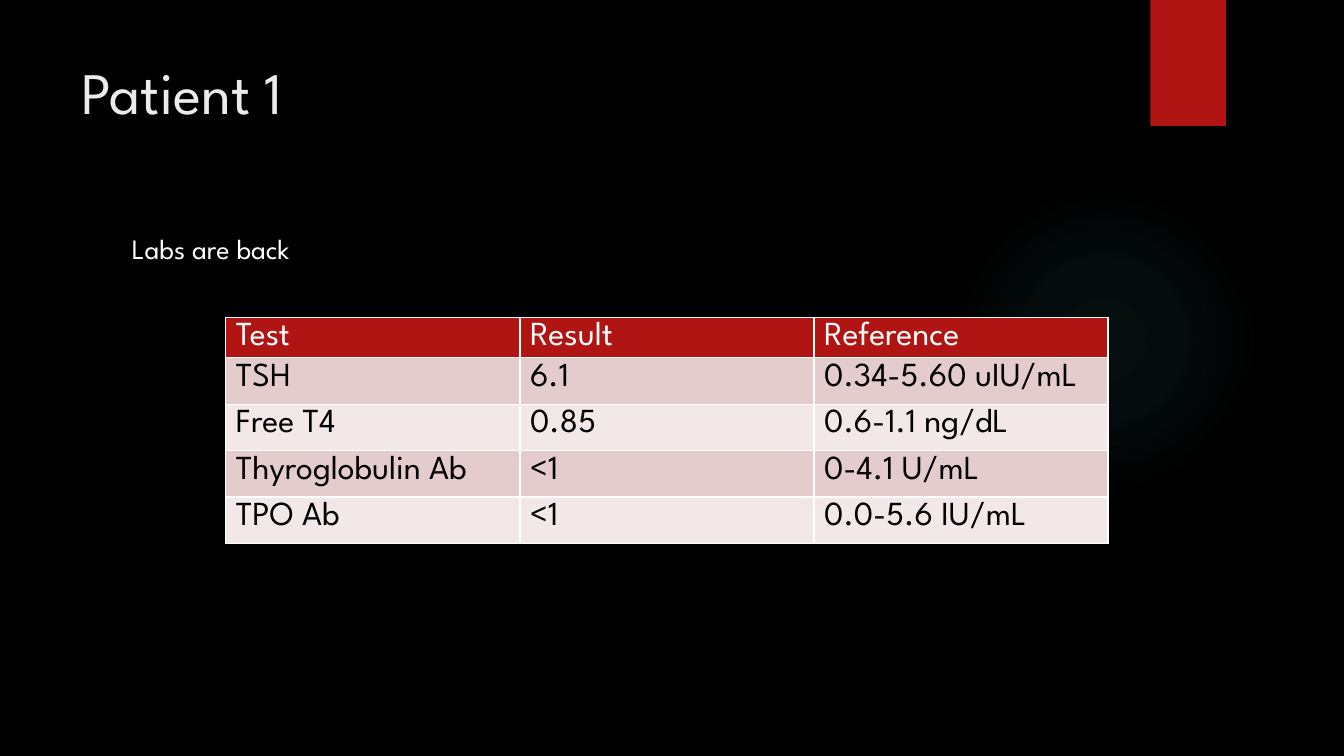
from lxml import etree
from pptx import Presentation
from pptx.dml.color import RGBColor
from pptx.enum.shapes import MSO_SHAPE
from pptx.enum.text import MSO_ANCHOR
from pptx.oxml import parse_xml
from pptx.oxml.ns import nsdecls, qn
from pptx.util import Inches, Pt

OVAL, RECT = MSO_SHAPE.OVAL, MSO_SHAPE.RECTANGLE
TOP, MIDDLE = MSO_ANCHOR.TOP, MSO_ANCHOR.MIDDLE
FONT = "League Spartan"
RED, WHITE, BLACK = "B01513", "FFFFFF", "000000"
BANDS = ["E4CCCC", "F2E8E7"]
LABS = [
    ["Test", "Result", "Reference"],
    ["TSH", "6.1", "0.34-5.60 uIU/mL"],
    ["Free T4", "0.85", "0.6-1.1 ng/dL"],
    ["Thyroglobulin Ab", "<1", "0-4.1 U/mL"],
    ["TPO Ab", "<1", "0.0-5.6 IU/mL"],
]


def rgb(code):
    return RGBColor.from_string(code)


def inches(box):
    return [Inches(n) for n in box]


def style(frame, size, color):
    for par in frame.paragraphs:
        for run in par.runs:
            run.font.name = FONT
            run.font.size = Pt(size)
            run.font.color.rgb = rgb(color)


def add_plain(slide, kind, box):
    shape = slide.shapes.add_shape(kind, *inches(box))
    shape.shadow.inherit = False
    shape.line.fill.background()
    return shape


def add_glow(slide, box):
    glow = add_plain(slide, OVAL, box)
    stops = "".join(
        f'<a:gs pos="{pos}000"><a:srgbClr val="50B9C1">'
        f'<a:alpha val="{alpha}000"/></a:srgbClr></a:gs>'
        for pos, alpha in [(0, 7), (36, 6), (69, 0), (100, 0)])
    fill = parse_xml(
        f'<a:gradFill {nsdecls("a")}><a:gsLst>{stops}</a:gsLst>'
        '<a:path path="circle"><a:fillToRect l="50000" t="50000" '
        'r="50000" b="50000"/></a:path></a:gradFill>')
    glow._element.spPr.find(qn("a:prstGeom")).addnext(fill)


def add_tab(slide, box):
    tab = add_plain(slide, RECT, box)
    tab.fill.solid()
    tab.fill.fore_color.rgb = rgb(RED)


def add_text(slide, box, text, size, color):
    frame = slide.shapes.add_textbox(*inches(box)).text_frame
    frame.word_wrap = True
    frame.vertical_anchor = TOP
    frame.text = text
    style(frame, size, color)


def add_rules(cell):
    # Borders come before the fill in the cell properties
    props = cell._tc.get_or_add_tcPr()
    for spot, side in enumerate(["lnL", "lnR", "lnT", "lnB"]):
        line = etree.Element(qn(f"a:{side}"), w=str(Pt(1)))
        fill = etree.SubElement(line, qn("a:solidFill"))
        etree.SubElement(fill, qn("a:srgbClr"), val=WHITE)
        props.insert(spot, line)


def add_labs(slide, box, head):
    rows, cols = len(LABS), len(LABS[0])
    table = slide.shapes.add_table(rows, cols, *inches(box)).table
    for col in table.columns:
        col.width = Inches(box[2] / cols)
    for r, row in enumerate(LABS):
        high = (box[3] - head) / (rows - 1) if r else head
        table.rows[r].height = Inches(high)
        for c, text in enumerate(row):
            cell = table.cell(r, c)
            cell.text = text
            style(cell.text_frame, 24, BLACK if r else WHITE)
            # Tight margins keep the rows at their set heights
            cell.margin_top = Inches(0.05 if r else 0)
            cell.margin_bottom = 0
            cell.vertical_anchor = TOP if r else MIDDLE
            cell.fill.solid()
            cell.fill.fore_color.rgb = rgb(BANDS[(r - 1) % 2] if r else RED)
            add_rules(cell)


def main():
    deck = Presentation()
    deck.slide_width, deck.slide_height = inches([13.33, 7.5])
    slide = deck.slides.add_slide(deck.slide_layouts[6])
    slide.background.fill.solid()
    slide.background.fill.fore_color.rgb = rgb(BLACK)

    # Backdrop
    add_glow(slide, [9.41, 1.83, 3.08, 3.08])
    add_tab(slide, [11.41, 0, 0.75, 1.25])

    # Title and lead
    add_text(slide, [0.71, 0.5, 10.29, 1.53], "Patient 1", 42, "EBEBEB")
    add_text(slide, [1.21, 2.25, 9.78, 4.59], "Labs are back", 20, WHITE)

    # Lab results
    add_labs(slide, [2.24, 3.15, 8.75, 2.24], 0.4)
    deck.save("out.pptx")


if __name__ == "__main__":
    main()
